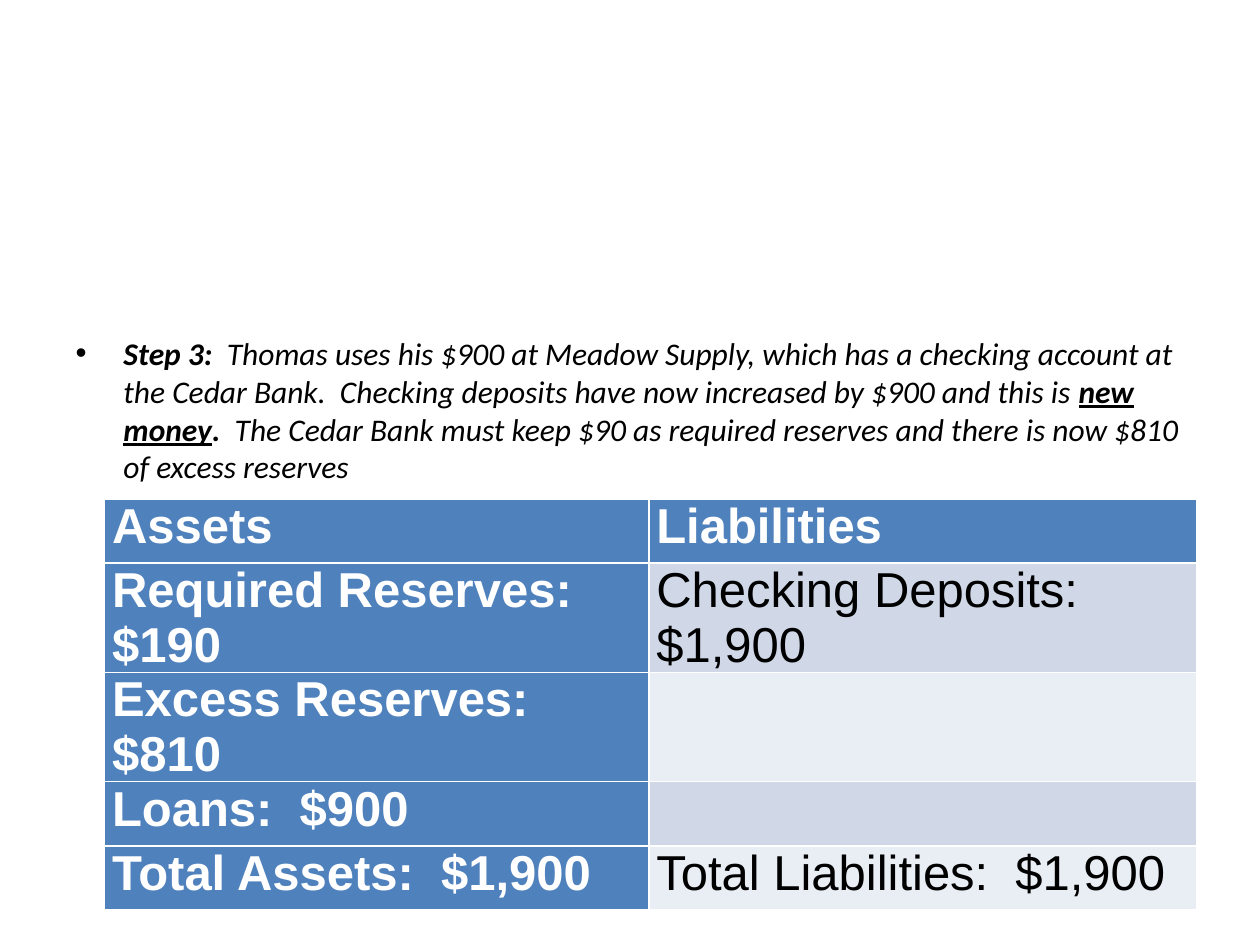
"""Build a slide on new money with a bank balance sheet."""
from pptx import Presentation
from pptx.dml.color import RGBColor
from pptx.enum.text import MSO_ANCHOR, MSO_AUTO_SIZE
from pptx.util import Inches, Pt

STEP = [
    ("Step 3:  ", {"bold": True}),
    ("Thomas uses his $900 at Meadow Supply, which has a checking account at "
     "the Cedar Bank.  Checking deposits have now increased by $900 and this is ", {}),
    ("new money", {"bold": True, "line": True}),
    (".  ", {"bold": True}),
    ("The Cedar Bank must keep $90 as required reserves and there is now $810 "
     "of excess reserves", {}),
]
SHEET = [
    ("Assets", "Liabilities"),
    ("Required Reserves:  $190", "Checking Deposits:  $1,900"),
    ("Excess Reserves:  $810", ""),
    ("Loans:  $900", ""),
    ("Total Assets:  $1,900", "Total Liabilities:  $1,900"),
]
WIDTHS = (4.32, 4.35)
ROW = 0.51
BLUE, BANDS = "4F81BD", ("E9EDF4", "D0D8E8")


def color(code):
    return RGBColor.from_string(code)


def write(para, text, size=28, face="Arial", ink="000000",
          bold=False, slant=False, line=False):
    run = para.add_run()
    run.text = text
    font = run.font
    font.size, font.name = Pt(size), face
    font.bold, font.italic, font.underline = bold, slant, line
    font.color.rgb = color(ink)


def add_step(body):
    body.left, body.top = Inches(0.5), Inches(2.6)
    body.width, body.height = Inches(9), Inches(4.13)
    frame = body.text_frame
    frame.word_wrap = True
    frame.auto_size = MSO_AUTO_SIZE.NONE
    frame.vertical_anchor = MSO_ANCHOR.TOP
    para = frame.paragraphs[0]
    para.space_before, para.space_after = Pt(0), Pt(18)
    props = para._p.get_or_add_pPr()
    props.set("marL", str(Inches(0.38)))
    props.set("indent", str(Inches(-0.38)))
    for text, style in STEP:
        write(para, text, size=18, face="Calibri", slant=True, **style)


def add_sheet(slide):
    table = slide.shapes.add_table(
        len(SHEET), len(WIDTHS), Inches(0.83), Inches(3.96),
        Inches(sum(WIDTHS)), Inches(ROW * len(SHEET))).table
    table.first_col = True
    for col, width in zip(table.columns, WIDTHS):
        col.width = Inches(width)
    for r, texts in enumerate(SHEET):
        table.rows[r].height = Inches(ROW)
        for c, text in enumerate(texts):
            cell = table.cell(r, c)
            head = r == 0 or c == 0
            cell.fill.solid()
            cell.fill.fore_color.rgb = color(BLUE if head else BANDS[r % 2])
            cell.margin_left = cell.margin_right = Inches(0.06)
            cell.margin_top = cell.margin_bottom = 0
            if text:
                write(cell.text_frame.paragraphs[0], text, bold=head,
                      ink="FFFFFF" if head else "000000")


def main():
    deck = Presentation()
    deck.slide_width, deck.slide_height = Inches(10), Inches(7.5)
    slide = deck.slides.add_slide(deck.slide_layouts[1])
    title = slide.shapes.title._element
    title.getparent().remove(title)
    add_step(slide.placeholders[1])
    add_sheet(slide)
    deck.save("out.pptx")


if __name__ == "__main__":
    main()
